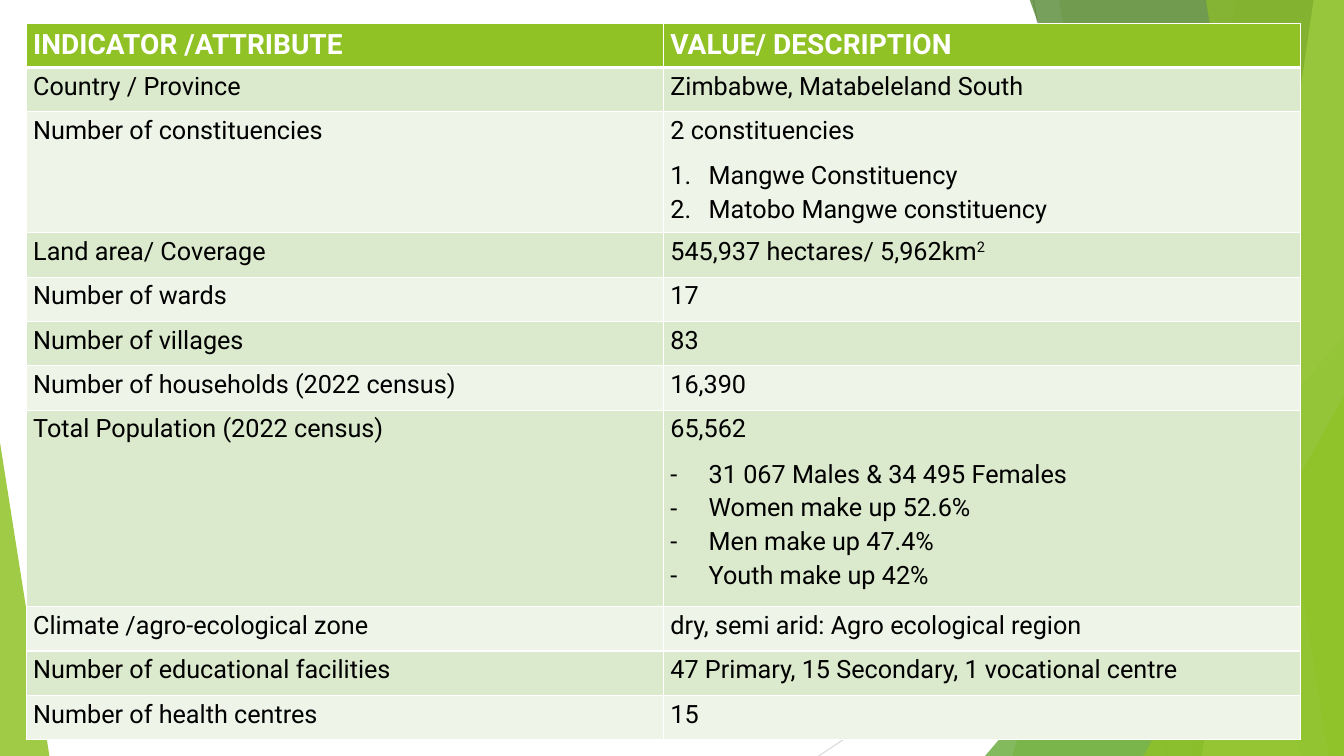
import pptx
import pptx.dml.color
import pptx.enum.shapes
import pptx.oxml
import pptx.oxml.ns
import pptx.util
from dataclasses import dataclass
from lxml import etree

Inches = pptx.util.Inches
Pt = pptx.util.Pt
qn = pptx.oxml.ns.qn


@dataclass(frozen=True)
class Theme:
    font: str = "Roboto"
    header_size: int = 20
    body_size: int = 18
    white: str = "FFFFFF"
    black: str = "000000"
    green: str = "90C226"
    mid_green: str = "54A021"
    dark_green: str = "3F7819"
    light_green: str = "C0E474"
    bands: tuple = ("DBE9CD", "EEF4E8")
    grey: str = "BFBFBF"
    light_grey: str = "D9D9D9"


THEME = Theme()
WIDTH, HEIGHT = 13.33, 7.5
TOP = -0.01

# Table content: label, value, listed details, bullet ("1." numbers the list)
ROWS = [
    ("Country / Province", "Zimbabwe, Matabeleland South"),
    ("Number of constituencies", "2 constituencies",
     ["Mangwe Constituency", "Matobo Mangwe constituency"], "1."),
    ("Land area/ Coverage", "545,937 hectares/ 5,962km^2"),
    ("Number of wards", "17"),
    ("Number of villages", "83"),
    ("Number of households (2022 census)", "16,390"),
    ("Total Population (2022 census)", "65,562",
     ["31 067 Males & 34 495 Females", "Women make up 52.6%",
      "Men make up 47.4%", "Youth make up 42%"], "-"),
    ("Climate /agro-ecological zone", "dry, semi arid: Agro ecological region"),
    ("Number of educational facilities", "47 Primary, 15 Secondary, 1 vocational centre"),
    ("Number of health centres", "15"),
]
ROW_HEIGHT = 0.44
TALL_ROWS = {2: 1.2, 7: 1.95}


def rgb(color):
    return pptx.dml.color.RGBColor.from_string(color)


# Background decoration
def paint(sp, color, opacity):
    sp.shadow.inherit = False
    sp.fill.solid()
    sp.fill.fore_color.rgb = rgb(color)
    clr = sp.fill._xPr.find(qn("a:solidFill"))[0]
    etree.SubElement(clr, qn("a:alpha")).set("val", str(opacity * 1000))
    sp.line.fill.background()


def add_line(slide, start, end, color):
    line = slide.shapes.add_connector(
        pptx.enum.shapes.MSO_CONNECTOR.STRAIGHT,
        *(Inches(v) for v in (*start, *end)))
    line.line.color.rgb = rgb(color)
    line.line.width = Pt(0.75)
    etree.SubElement(line._element.spPr, qn("a:effectLst"))


def add_band(slide, top_x, bottom_x, color, opacity):
    """A band reaching from a slanted left side to the slide's right edge."""
    points = [(WIDTH, TOP), (WIDTH, HEIGHT), (bottom_x, HEIGHT)]
    builder = slide.shapes.build_freeform(Inches(top_x), Inches(TOP))
    builder.add_line_segments([(Inches(x), Inches(y)) for x, y in points])
    paint(builder.convert_to_shape(), color, opacity)


def add_triangle(slide, left, top, width, apex, color, opacity):
    sp = slide.shapes.add_shape(
        pptx.enum.shapes.MSO_SHAPE.ISOSCELES_TRIANGLE,
        Inches(left), Inches(top), Inches(width), Inches(HEIGHT - top))
    sp.adjustments[0] = apex
    paint(sp, color, opacity)


def add_decoration(slide):
    t = THEME
    add_line(slide, (10.25, 0), (11.58, HEIGHT), t.grey)
    add_line(slide, (WIDTH, 4.03), (8.12, HEIGHT), t.light_grey)
    add_band(slide, 12.28, 10.04, t.green, 30)
    add_band(slide, 10.5, 11.83, t.green, 20)
    add_triangle(slide, 9.77, 3.33, 3.56, 1, t.mid_green, 72)
    add_band(slide, 10.21, 12.91, t.dark_green, 70)
    add_band(slide, 13.03, 11.92, t.light_green, 70)
    add_band(slide, 11.96, 13.18, t.green, 65)
    add_triangle(slide, 11.34, 3.93, 1.99, 1, t.green, 80)
    add_triangle(slide, 0, 4.39, 0.49, 0, t.green, 85)


# Table
def add_borders(cell, top, bottom):
    tcPr = cell._tc.get_or_add_tcPr()
    for side, width in (("L", 1), ("R", 1), ("T", top), ("B", bottom)):
        ln = etree.SubElement(tcPr, qn("a:ln" + side), w=str(Pt(width)))
        fill = etree.SubElement(ln, qn("a:solidFill"))
        etree.SubElement(fill, qn("a:srgbClr"), val=THEME.white)


def add_bullet(p, bullet):
    pPr = p._p.get_or_add_pPr()
    pPr.set("marL", str(Inches(0.38)))
    pPr.set("indent", str(-Inches(0.38)))
    etree.SubElement(pPr, qn("a:buFont"), typeface=THEME.font)
    if bullet == "1.":
        etree.SubElement(pPr, qn("a:buAutoNum"), type="arabicPeriod")
    else:
        etree.SubElement(pPr, qn("a:buChar"), char=bullet)


def add_text(p, text, size, color, bold):
    """Write text as runs; whatever follows a caret is superscript."""
    for i, part in enumerate(text.split("^")):
        r = p.add_run()
        r.text = part
        r.font.name = THEME.font
        r.font.size = Pt(size)
        r.font.bold = bold
        r.font.color.rgb = rgb(color)
        if i:
            r._r.get_or_add_rPr().set("baseline", "30000")


def fill_cell(cell, row, text, details=(), bullet=None):
    header = row == 0
    add_borders(cell, 3 if row == 1 else 1, 3 if header else 1)
    cell.fill.solid()
    cell.fill.fore_color.rgb = rgb(THEME.green if header else THEME.bands[(row - 1) % 2])
    cell.margin_left = cell.margin_right = Inches(0.07)
    cell.margin_top = cell.margin_bottom = 0
    size = THEME.header_size if header else THEME.body_size
    color = THEME.white if header else THEME.black
    tf = cell.text_frame
    for i, line in enumerate([text, *details]):
        p = tf.add_paragraph() if i else tf.paragraphs[0]
        if i:
            add_bullet(p, bullet)
        p.line_spacing = 1.15
        p.space_after = Pt(8 if i in (0, len(details)) else 0)
        add_text(p, line, size, color, header)


def add_profile_table(slide):
    rows = [("INDICATOR /ATTRIBUTE", "VALUE/ DESCRIPTION"), *ROWS]
    heights = [TALL_ROWS.get(i, ROW_HEIGHT) for i in range(len(rows))]
    table = slide.shapes.add_table(
        len(rows), 2, Inches(0.26), Inches(0.23),
        Inches(12.64), Inches(sum(heights))).table
    for i, (label, *value) in enumerate(rows):
        table.rows[i].height = Inches(heights[i])
        fill_cell(table.cell(i, 0), i, label)
        fill_cell(table.cell(i, 1), i, *value)


def main():
    prs = pptx.Presentation()
    prs.slide_width, prs.slide_height = Inches(WIDTH), Inches(HEIGHT)
    slide = prs.slides.add_slide(prs.slide_layouts[6])
    add_decoration(slide)
    add_profile_table(slide)
    prs.save("out.pptx")


if __name__ == "__main__":
    main()
